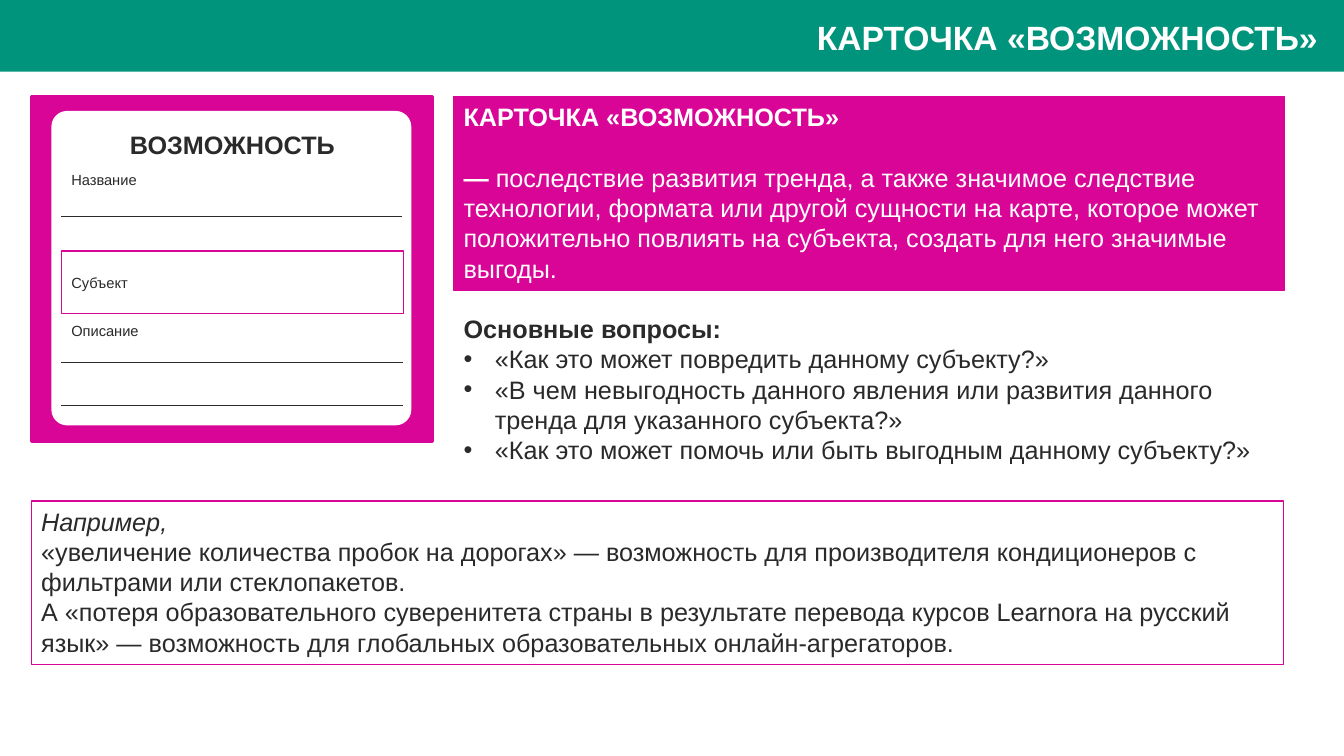
"""Build the slide that explains the opportunity card."""
from dataclasses import dataclass

from lxml import etree
from pptx import Presentation
from pptx.dml.color import RGBColor
from pptx.enum.shapes import MSO_CONNECTOR, MSO_SHAPE
from pptx.enum.text import MSO_ANCHOR, PP_ALIGN
from pptx.oxml.ns import qn
from pptx.util import Emu, Pt

RECT, ROUNDED = MSO_SHAPE.RECTANGLE, MSO_SHAPE.ROUNDED_RECTANGLE
STRAIGHT = MSO_CONNECTOR.STRAIGHT
LEFT, CENTER, RIGHT = PP_ALIGN.LEFT, PP_ALIGN.CENTER, PP_ALIGN.RIGHT
TOP, MIDDLE = MSO_ANCHOR.TOP, MSO_ANCHOR.MIDDLE
EMU_PER_PX = 9144


@dataclass(frozen=True)
class Theme:
    teal: str = "00947C"
    magenta: str = "D90597"
    ink: str = "2A2A2A"
    white: str = "FFFFFF"
    font: str = "Arial"
    title: float = 24
    body: float = 18
    label: float = 10.5
    thin: float = 0.75
    thick: float = 2


THEME = Theme()


@dataclass(frozen=True)
class Run:
    text: str
    bold: bool = False
    italic: bool = False


@dataclass(frozen=True)
class Para:
    runs: tuple[Run, ...]
    align: int = LEFT
    before: float = 0
    bullet: bool = False


@dataclass(frozen=True)
class Panel:
    box: tuple[int, int, int, int]
    fill: str | None = None
    outline: str | None = None
    weight: float = THEME.thin
    corner: float | None = None
    paras: tuple[Para, ...] = ()
    size: float = THEME.body
    color: str = THEME.ink
    inset: tuple[int, int] = (10, 5)
    anchor: int = TOP


@dataclass(frozen=True)
class Rule:
    left: int
    right: int
    y: int


def px(length: int) -> Emu:
    """Turn px into EMU."""
    return Emu(length * EMU_PER_PX)


def plain(text: str, **formats) -> Para:
    """Make a regular paragraph of one run."""
    return Para((Run(text),), **formats)


def bold(text: str, **formats) -> Para:
    """Make a bold paragraph of one run."""
    return Para((Run(text, bold=True),), **formats)


def write(frame, panel: Panel) -> None:
    """Write the paragraphs of a panel into its text frame."""
    side, top = (px(gap) for gap in panel.inset)
    frame_format = {
        "word_wrap": True, "vertical_anchor": panel.anchor,
        "margin_left": side, "margin_right": side,
        "margin_top": top, "margin_bottom": top,
    }
    for name, value in frame_format.items():
        setattr(frame, name, value)
    for index, para in enumerate(panel.paras):
        paragraph = frame.add_paragraph() if index else frame.paragraphs[0]
        paragraph.alignment = para.align
        if para.before:
            paragraph.space_before = Pt(para.before)
        if para.bullet:
            properties = paragraph._p.get_or_add_pPr()
            properties.set("marL", str(px(31)))
            properties.set("indent", str(-px(31)))
            etree.SubElement(properties, qn("a:buFont")).set("typeface", THEME.font)
            etree.SubElement(properties, qn("a:buChar")).set("char", "•")
        for part in para.runs:
            run = paragraph.add_run()
            run.text = part.text
            font_format = {
                "name": THEME.font, "size": Pt(panel.size),
                "bold": part.bold, "italic": part.italic,
            }
            for name, value in font_format.items():
                setattr(run.font, name, value)
            run.font.color.rgb = RGBColor.from_string(panel.color)


def draw_panel(slide, panel: Panel) -> None:
    """Draw a filled, outlined or bare panel with its text."""
    box = tuple(px(length) for length in panel.box)
    if not (panel.fill or panel.outline):
        write(slide.shapes.add_textbox(*box).text_frame, panel)
        return
    shape = slide.shapes.add_shape(RECT if panel.corner is None else ROUNDED, *box)
    shape.shadow.inherit = False
    if panel.corner is not None:
        shape.adjustments[0] = panel.corner
    if panel.fill:
        shape.fill.solid()
        shape.fill.fore_color.rgb = RGBColor.from_string(panel.fill)
    else:
        shape.fill.background()
    if panel.outline:
        shape.line.color.rgb = RGBColor.from_string(panel.outline)
        shape.line.width = Pt(panel.weight)
    else:
        shape.line.fill.background()
    if panel.paras:
        write(shape.text_frame, panel)


def draw_rule(slide, rule: Rule) -> None:
    """Draw a thin writing line on the card."""
    line = slide.shapes.add_connector(
        STRAIGHT, px(rule.left), px(rule.y), px(rule.right), px(rule.y))
    line.line.color.rgb = RGBColor.from_string(THEME.ink)
    line.line.width = Pt(THEME.thin)
    etree.SubElement(line._element.spPr, qn("a:effectLst"))


HEADER = (
    Panel((-1, 0, 1335, 71), fill=THEME.teal),
    Panel((391, 12, 921, 50), size=THEME.title, color=THEME.white, inset=(5, 5),
          paras=(bold("КАРТОЧКА «ВОЗМОЖНОСТЬ»", align=RIGHT),)),
)
CARD = (
    Panel((31, 96, 398, 342), THEME.magenta, THEME.magenta, THEME.thick, corner=0),
    Panel((51, 110, 357, 312), THEME.white, corner=0.05),
    Panel((61, 123, 339, 40), paras=(bold("ВОЗМОЖНОСТЬ", align=CENTER),)),
    Panel((61, 165, 170, 28), paras=(plain("Название"),), size=THEME.label),
    Panel((61, 314, 164, 28), paras=(plain("Описание"),), size=THEME.label),
    Panel((61, 249, 339, 62), outline=THEME.magenta, paras=(plain("Субъект"),),
          size=THEME.label, anchor=MIDDLE),
)
CARD_RULES = (Rule(61, 399, 215), Rule(61, 400, 360), Rule(61, 400, 402))
EXPLANATION = (
    Panel((450, 96, 824, 192), THEME.magenta, THEME.magenta, color=THEME.white, paras=(
        bold("КАРТОЧКА «ВОЗМОЖНОСТЬ»"),
        Para((Run("— ", bold=True),
              Run("последствие развития тренда, а также значимое следствие технологии, "
                  "формата или другой сущности на карте, которое может положительно "
                  "повлиять на субъекта, создать для него значимые выгоды.")), before=21.6),
    )),
    Panel((31, 497, 1242, 162), outline=THEME.magenta, paras=(
        Para((Run("Например,", italic=True),)),
        plain("«увеличение количества пробок на дорогах» — возможность для "
              "производителя кондиционеров с фильтрами или стеклопакетов."),
        plain("А «потеря образовательного суверенитета страны в результате перевода "
              "курсов Learnora на русский язык» — возможность для глобальных "
              "образовательных онлайн-агрегаторов."),
    )),
    Panel((450, 306, 824, 162), paras=(
        bold("Основные вопросы:"),
        plain("«Как это может повредить данному субъекту?»", bullet=True),
        plain("«В чем невыгодность данного явления или развития данного тренда "
              "для указанного субъекта?»", bullet=True),
        plain("«Как это может помочь или быть выгодным данному субъекту?»", bullet=True),
    )),
)


def main() -> None:
    """Assemble the slide and save it."""
    deck = Presentation()
    deck.slide_width, deck.slide_height = px(1333), px(750)
    slide = deck.slides.add_slide(deck.slide_layouts[6])
    for panel in HEADER + CARD + EXPLANATION:
        draw_panel(slide, panel)
    for rule in CARD_RULES:
        draw_rule(slide, rule)
    deck.save("out.pptx")


if __name__ == "__main__":
    main()
